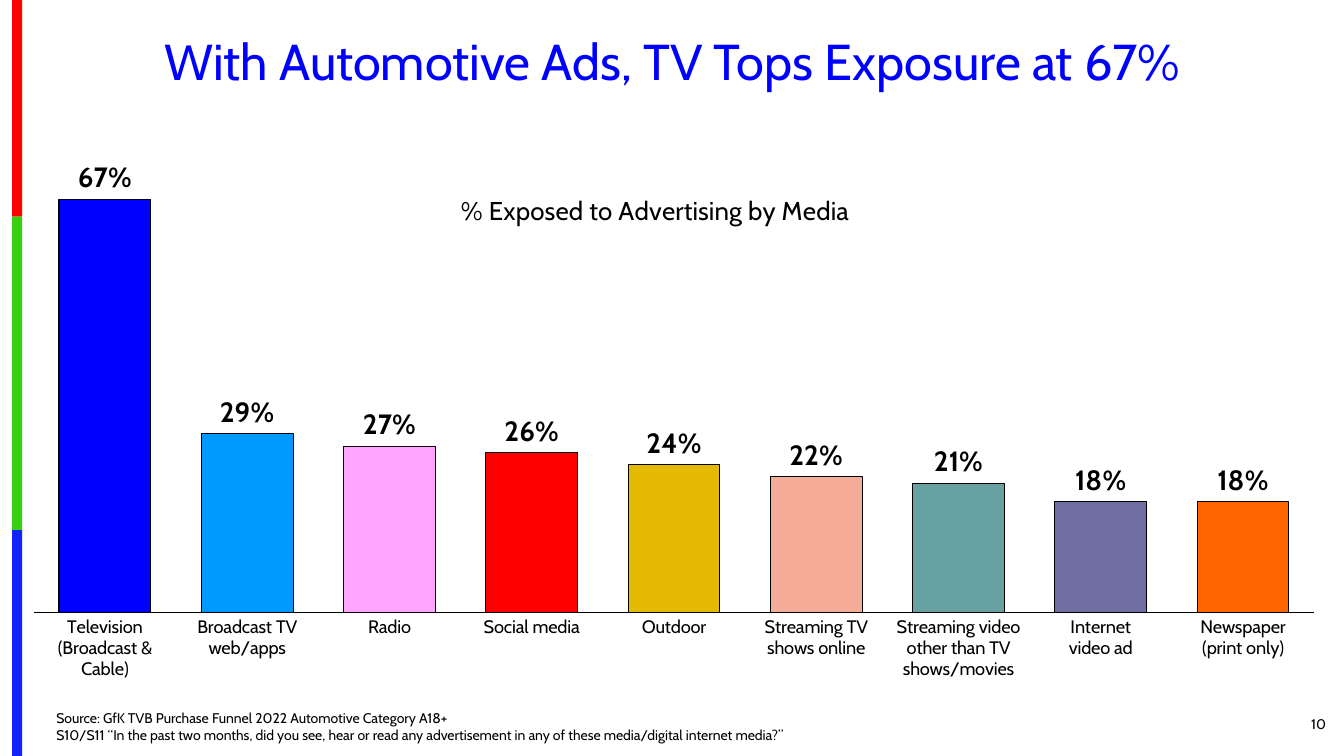
from pptx import Presentation, util as u
from pptx.chart import data
from pptx.dml.color import RGBColor
from pptx.enum import chart as ch, shapes, text
from pptx.oxml import parse_xml
from pptx.oxml.ns import nsdecls

FONT = "Cabin"
STRIPES = [("FE0000", 2.15), ("36CF12", 3.11), ("1322FE", 2.24)]
MEDIA = [
    ("Television (Broadcast & Cable)", 0.67, "0000FF"),
    ("Broadcast TV\nweb/apps", 0.29, "0099FF"),
    ("Radio", 0.27, "FFA4FF"),
    ("Social media", 0.26, "FF0000"),
    ("Outdoor", 0.24, "E3B905"),
    ("Streaming TV shows online", 0.22, "F5AD99"),
    ("Streaming video other than TV shows/movies", 0.21, "67A1A1"),
    ("Internet\nvideo ad", 0.18, "6E6EA3"),
    ("Newspaper\n(print only)", 0.18, "FF6600"),
]
SOURCE = (
    "Source: GfK TVB Purchase Funnel 2022 Automotive Category A18+\n"
    "S10/S11 “In the past two months, did you see, hear or read any "
    "advertisement in any of these media/digital internet media?”"
)


def rgb(value):
    return RGBColor.from_string(value)


def set_font(font, size, color="000000", bold=False):
    font.name = FONT
    font.size = u.Pt(size)
    font.bold = bold
    font.color.rgb = rgb(color)


def set_fill(fill, color):
    fill.solid()
    fill.fore_color.rgb = rgb(color)


def set_line(line, color="000000", width=0.75):
    line.color.rgb = rgb(color)
    line.width = u.Pt(width)


def add_text(s, box, content, size, color="000000", align="LEFT", anchor="MIDDLE", spacing=None):
    tf = s.shapes.add_textbox(*map(u.Inches, box)).text_frame
    tf.word_wrap = True
    tf.vertical_anchor = text.MSO_ANCHOR[anchor]
    tf.text = content
    for p in tf.paragraphs:
        p.alignment = text.PP_ALIGN[align]
        p.line_spacing = spacing
        for r in p.runs:
            set_font(r.font, size, color)


def add_stripes(s, x, y, w):
    for color, h in STRIPES:
        sp = s.shapes.add_shape(shapes.MSO_SHAPE.RECTANGLE, *map(u.Inches, (x, y, w, h)))
        sp.shadow.inherit = False
        set_fill(sp.fill, color)
        sp.line.fill.background()
        y += h


def manual_layout(x, y, w=None, h=None):
    parts = '<c:layoutTarget val="inner"/>' if w else ""
    parts += '<c:xMode val="edge"/><c:yMode val="edge"/>'
    for tag, value in zip("xywh", (x, y, w, h)):
        if value is not None:
            parts += f'<c:{tag} val="{value}"/>'
    return parse_xml(f'<c:layout {nsdecls("c")}><c:manualLayout>{parts}</c:manualLayout></c:layout>')


def set_layout(element, layout, index):
    for old in element.findall(layout.tag):
        element.remove(old)
    element.insert(index, layout)


def add_exposure_chart(s, box):
    cd = data.CategoryChartData(number_format="0%")
    cd.categories = [name for name, _, _ in MEDIA]
    cd.add_series("Series 1", [value for _, value, _ in MEDIA])
    chart = s.shapes.add_chart(ch.XL_CHART_TYPE.COLUMN_CLUSTERED, *map(u.Inches, box), cd).chart
    set_font(chart.font, 10)
    chart.has_legend = False

    chart.has_title = True
    title = chart.chart_title
    title.text_frame.text = "% Exposed to Advertising by Media"
    set_font(title.text_frame.paragraphs[0].runs[0].font, 18.5)
    title.include_in_layout = False
    set_layout(title._element, manual_layout(0.33, 0.15), 1)
    plot_area = chart._chartSpace.chart.plotArea
    set_layout(plot_area, manual_layout(0, 0.03, 1, 0.86), 0)

    axis = chart.category_axis
    axis.major_tick_mark = ch.XL_TICK_MARK.NONE
    set_font(axis.tick_labels.font, 13)
    set_line(axis.format.line)
    chart.value_axis.visible = False
    chart.value_axis.has_major_gridlines = False
    chart.value_axis.minimum_scale = 0
    chart.value_axis.maximum_scale = 0.8

    plot = chart.plots[0]
    plot.vary_by_categories = False
    plot.gap_width = 55
    plot.overlap = -30
    series = plot.series[0]
    set_fill(series.format.fill, "3333FF")
    set_line(series.format.line)
    for i, (_, _, color) in enumerate(MEDIA):
        point = series.points[i].format
        set_fill(point.fill, color)
        set_line(point.line)

    labels = series.data_labels
    labels.show_value = True
    labels.position = ch.XL_LABEL_POSITION.OUTSIDE_END
    labels.number_format = "0%"
    labels.number_format_is_linked = False
    set_font(labels.font, 20, bold=True)


def main():
    prs = Presentation()
    prs.slide_width = u.Inches(13.33)
    prs.slide_height = u.Inches(7.5)
    s = prs.slides.add_slide(prs.slide_layouts[6])
    add_stripes(s, 0.12, 0, 0.1)
    add_text(s, (0.46, 0.31, 12.42, 0.65), "With Automotive Ads, TV Tops Exposure at 67%",
             36, "0000FF", "CENTER", spacing=0.9)
    add_exposure_chart(s, (0.33, 1.01, 12.71, 5.73))
    add_text(s, (12.17, 6.98, 1.08, 0.4), "10", 10, align="RIGHT")
    add_text(s, (0.46, 6.98, 9.45, 0.44), SOURCE, 10, anchor="BOTTOM")
    prs.save("out.pptx")


if __name__ == "__main__":
    main()
